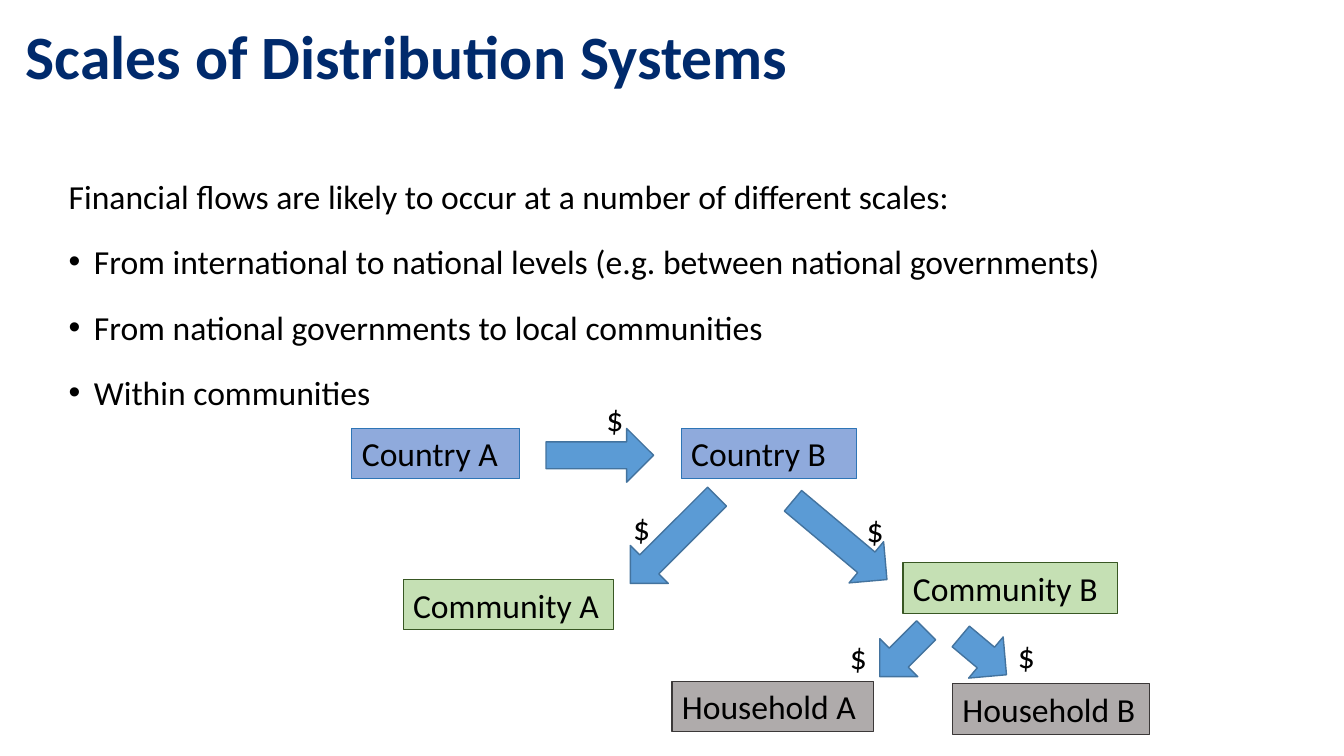
from lxml import etree
from pptx import Presentation
from pptx import util as u
from pptx.dml.color import RGBColor
from pptx.enum import shapes, text
from pptx.oxml.ns import qn

BLACK = RGBColor(0x00, 0x00, 0x00)
NAVY = RGBColor(0x00, 0x2A, 0x6C)
ARROW_FILL = RGBColor(0x5B, 0x9B, 0xD5)
ARROW_LINE = RGBColor(0x43, 0x73, 0x9E)
# Fill and outline for each scale of the economy
COUNTRY = RGBColor(0x8F, 0xAA, 0xDC), RGBColor(0x2E, 0x75, 0xB6)
COMMUNITY = RGBColor(0xC5, 0xE0, 0xB4), RGBColor(0x38, 0x57, 0x23)
HOUSEHOLD = RGBColor(0xAF, 0xAB, 0xAB), RGBColor(0x3B, 0x38, 0x38)


class FlowSlide:
    """A slide on a grid of 160 columns by 90 rows."""
    font, size = "Calibri", 24
    cols, rows = 160, 90

    def __init__(self, prs):
        self.col = prs.slide_width / self.cols
        self.row = prs.slide_height / self.rows
        self.slide = prs.slides.add_slide(prs.slide_layouts[6])

    def area(self, x, y, w, h):
        return [u.Emu(round(n)) for n in
                (x * self.col, y * self.row, w * self.col, h * self.row)]

    def style(self, p, size=None, color=BLACK, bold=False):
        for r in p.runs:
            r.font.name = self.font
            r.font.size = u.Pt(size or self.size)
            r.font.bold = bold
            r.font.color.rgb = color

    def textbox(self, x, y, w, h, wrap=True):
        tf = self.slide.shapes.add_textbox(*self.area(x, y, w, h)).text_frame
        tf.word_wrap = wrap
        return tf

    def title(self, words, *box):
        tf = self.textbox(*box)
        tf.vertical_anchor = text.MSO_ANCHOR.MIDDLE
        tf.text = words
        tf.paragraphs[0].line_spacing = 0.9
        self.style(tf.paragraphs[0], 44, NAVY, True)

    def body(self, lead, bullets, *box):
        tf = self.textbox(*box)
        tf.text = lead
        for words in bullets:
            p = tf.add_paragraph()
            p.text = words
            p.space_before = u.Pt(6)
            pPr = p._p.get_or_add_pPr()
            pPr.set("marL", str(u.Inches(0.25)))
            pPr.set("indent", str(-u.Inches(0.25)))
            etree.SubElement(pPr, qn("a:buFont"), typeface="Arial")
            etree.SubElement(pPr, qn("a:buChar"), char="•")
        for p in tf.paragraphs:
            p.space_after = u.Pt(12)
            self.style(p)

    def shape(self, kind, box, fill, line, width):
        sp = self.slide.shapes.add_shape(kind, *self.area(*box))
        sp.shadow.inherit = False
        sp.fill.solid()
        sp.fill.fore_color.rgb = fill
        sp.line.color.rgb = line
        sp.line.width = u.Pt(width)
        return sp

    def node(self, words, colors, x, y, w):
        sp = self.shape(shapes.MSO_SHAPE.RECTANGLE, (x, y, w, 6), *colors, 0.75)
        tf = sp.text_frame
        tf.word_wrap = True
        tf.vertical_anchor = text.MSO_ANCHOR.TOP
        tf.text = words
        p = tf.paragraphs[0]
        p.alignment = text.PP_ALIGN.LEFT
        self.style(p)

    def arrow(self, kind, box, angle=0):
        sp = self.shape(kind, box, ARROW_FILL, ARROW_LINE, 1)
        sp.rotation = angle

    def dollar(self, x, y):
        tf = self.textbox(x, y, 4, 6, wrap=False)
        tf.text = "$"
        self.style(tf.paragraphs[0])


def main():
    prs = Presentation()
    prs.slide_width, prs.slide_height = u.Inches(13.33), u.Inches(7.5)
    s = FlowSlide(prs)

    # Heading and scales
    s.body("Financial flows are likely to occur at a number of different scales:",
           ["From international to national levels (e.g. between national governments)",
            "From national governments to local communities",
            "Within communities"], 7, 20.3, 146.6, 66.7)
    s.title("Scales of Distribution Systems", 1.9, 0, 155.9, 14.2)

    # Parties at each scale
    for words, colors, x, y, w in [
            ("Country A", COUNTRY, 41.9, 51, 20),
            ("Country B", COUNTRY, 81.1, 51, 20.9),
            ("Community A", COMMUNITY, 48, 69, 25),
            ("Community B", COMMUNITY, 107.5, 67, 25.6),
            ("Household A", HOUSEHOLD, 80, 81.1, 24),
            ("Household B", HOUSEHOLD, 113.4, 81.4, 23.5)]:
        s.node(words, colors, x, y, w)

    # Flows: across, then down to the left and right
    s.arrow(shapes.MSO_SHAPE.RIGHT_ARROW, (65, 51, 12.8, 6.4))
    for x, y, length, angle in [(77, 57, 14.6, 45), (96.8, 57, 14.6, -50),
                                (113.9, 74.5, 7.1, -50), (104.3, 73.9, 7.8, 45)]:
        s.arrow(shapes.MSO_SHAPE.DOWN_ARROW, (x, y, 6.4, length), angle)

    # Money labels
    for x, y in [(71, 46.8), (74.2, 59.8), (102, 60), (120, 75), (100, 75.1)]:
        s.dollar(x, y)

    prs.save("out.pptx")


if __name__ == "__main__":
    main()
